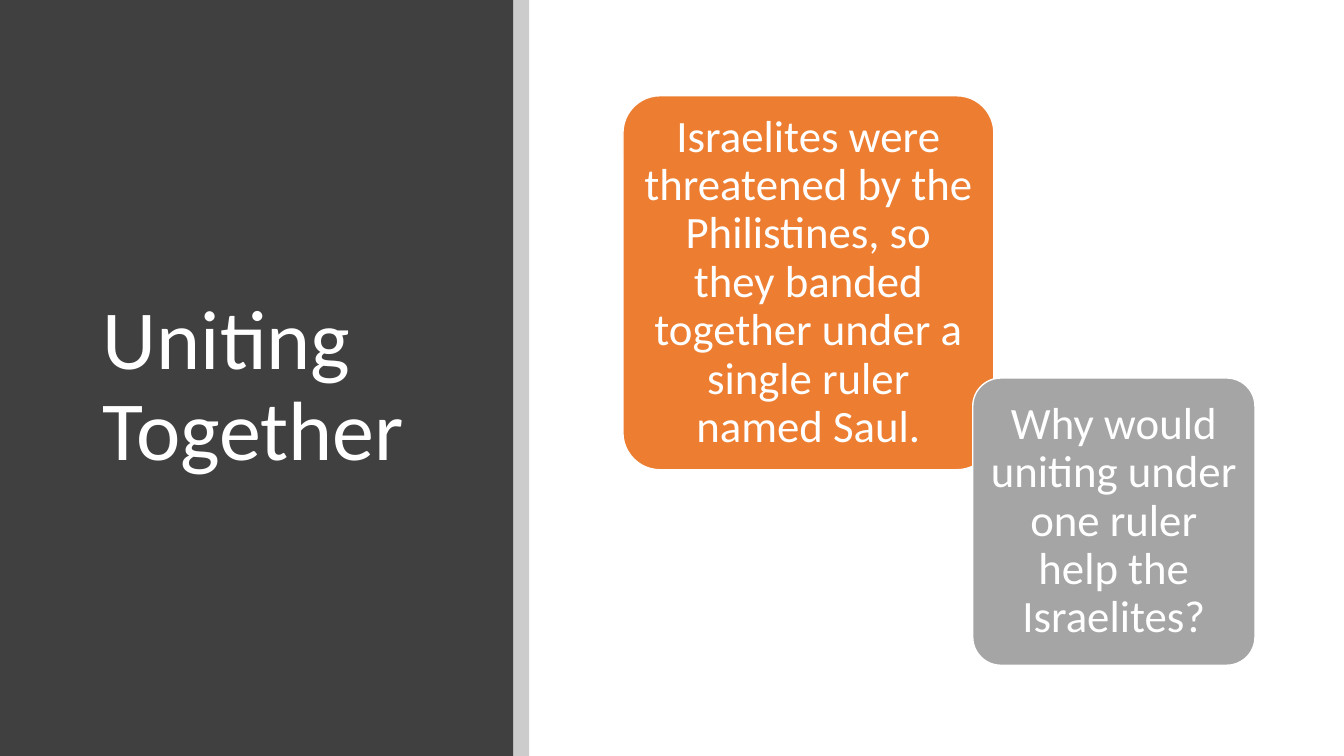
"""Build the "Uniting Together" slide with a dark title panel and two overlapping cards."""
from typing import NamedTuple

from lxml.etree import SubElement
from pptx import Presentation
from pptx.dml.color import RGBColor
from pptx.enum.shapes import MSO_SHAPE as Preset
from pptx.enum.text import MSO_ANCHOR as Anchor, MSO_AUTO_SIZE as AutoSize, PP_ALIGN as Align
from pptx.oxml.ns import qn
from pptx.shapes.autoshape import Shape
from pptx.slide import Slide
from pptx.text.text import TextFrame
from pptx.util import Inches, Pt

COLORS = {"panel": "404040", "strip": "000000", "statement": "ED7D31",
          "question": "A5A5A5", "light": "FFFFFF"}
FONT = "Calibri"
WIDTH, HEIGHT = Inches(13.333), Inches(7.5)
PANEL_WIDTH = 38.18


class Area(NamedTuple):
    """Left, top, width and height in percent of the slide."""
    left: float
    top: float
    width: float
    height: float

    def box(self) -> list[int]:
        """Return the area in EMU."""
        return [round(share * side / 100)
                for share, side in zip(self, (WIDTH, HEIGHT, WIDTH, HEIGHT))]


class Card(NamedTuple):
    """A rounded card with its text."""
    area: Area
    color: str
    text: str


TITLE_AREA = Area(6.9, 11.87, 27.38, 78.8)
CARDS = [
    Card(Area(46.35, 12.67, 27.6, 49.47), "statement",
         "Israelites were threatened by the Philistines, so they banded together "
         "under a single ruler named Saul."),
    Card(Area(72.38, 50, 21, 38), "question",
         "Why would uniting under one ruler help the Israelites?"),
]


def rgb(name: str) -> RGBColor:
    """Look up a named colour."""
    return RGBColor.from_string(COLORS[name])


def write(frame: TextFrame, text: str, *, size: float, align: Align,
          margins: tuple[float, float] = (0.1, 0.05)) -> None:
    """Fill a text frame with one formatted paragraph."""
    frame.word_wrap = True
    frame.auto_size = AutoSize.NONE
    frame.vertical_anchor = Anchor.MIDDLE
    frame.margin_left = frame.margin_right = Inches(margins[0])
    frame.margin_top = frame.margin_bottom = Inches(margins[1])
    paragraph = frame.paragraphs[0]
    paragraph.alignment = align
    paragraph.line_spacing = 0.9
    run = paragraph.add_run()
    run.text = text
    run.font.name = FONT
    run.font.size = Pt(size)
    run.font.color.rgb = rgb("light")


def add_block(slide: Slide, area: Area, color: str, preset: Preset = Preset.RECTANGLE) -> Shape:
    """Add a filled shape without outline or shadow."""
    block = slide.shapes.add_shape(preset, *area.box())
    block.shadow.inherit = False
    block.fill.solid()
    block.fill.fore_color.rgb = rgb(color)
    block.line.fill.background()
    return block


def add_card(slide: Slide, card: Card) -> None:
    """Add a rounded card with a thin light outline."""
    body = add_block(slide, card.area, card.color, Preset.ROUNDED_RECTANGLE)
    body.adjustments[0] = 0.1
    body.line.color.rgb = rgb("light")
    body.line.width = Pt(1)
    write(body.text_frame, card.text, size=32, align=Align.CENTER, margins=(0.07, 0.04))


def main() -> None:
    """Assemble and save the slide."""
    deck = Presentation()
    deck.slide_width, deck.slide_height = WIDTH, HEIGHT
    slide = deck.slides.add_slide(deck.slide_layouts[5])

    title = slide.shapes.title
    title.left, title.top, title.width, title.height = TITLE_AREA.box()
    write(title.text_frame, "Uniting Together", size=60, align=Align.LEFT)

    panel = add_block(slide, Area(0, 0, PANEL_WIDTH, 100), "panel")
    title.element.addprevious(panel.element)

    strip = add_block(slide, Area(PANEL_WIDTH, 0, 1.2, 100), "strip")
    strip_color = strip.element.spPr.find(qn("a:solidFill")).find(qn("a:srgbClr"))
    SubElement(strip_color, qn("a:alpha"), val="20000")

    for card in CARDS:
        add_card(slide, card)
    deck.save("out.pptx")


if __name__ == "__main__":
    main()
